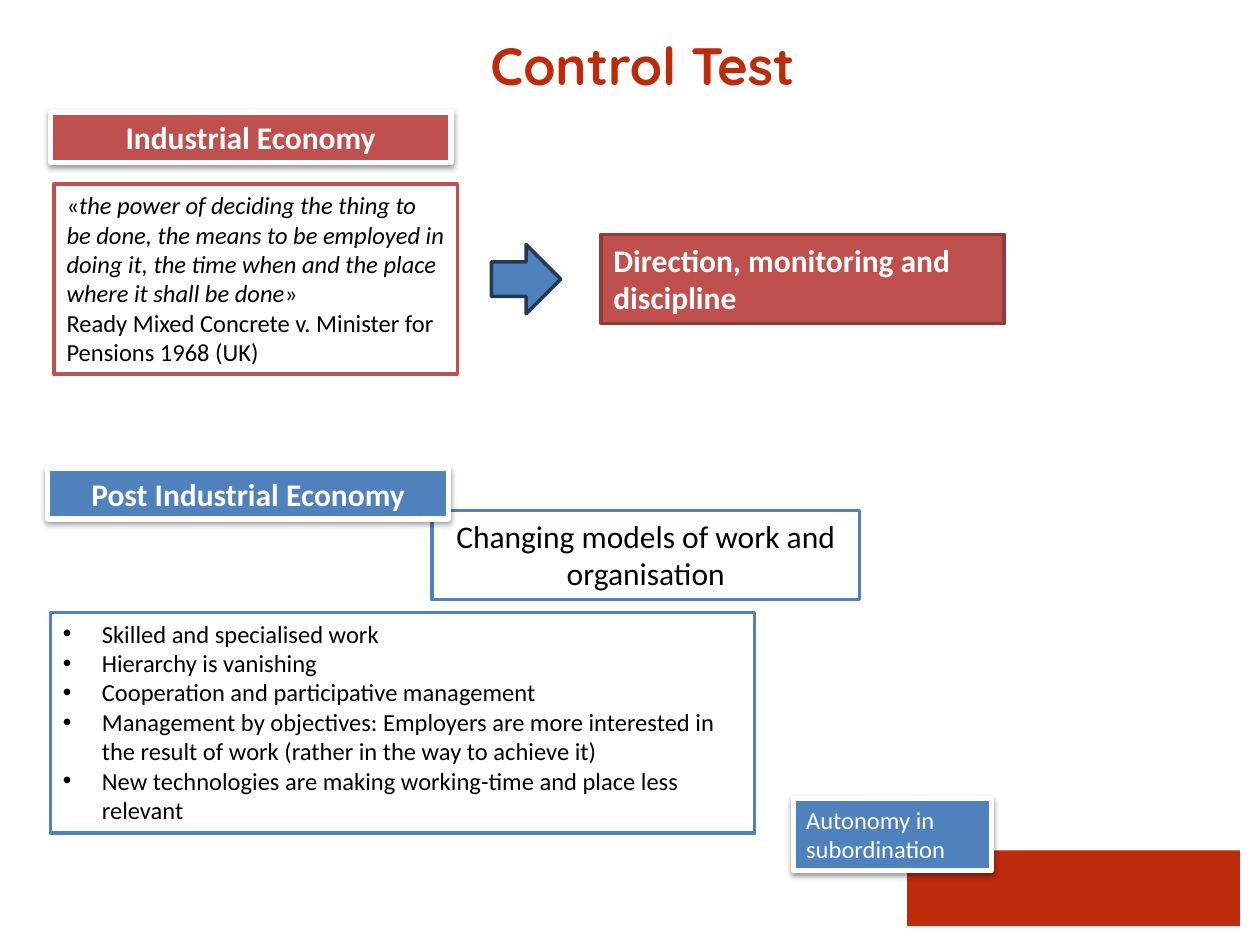
from lxml import etree
from pptx import Presentation
from pptx.dml.color import RGBColor
from pptx.enum.shapes import MSO_SHAPE
from pptx.enum.text import MSO_ANCHOR, PP_ALIGN
from pptx.oxml.ns import qn
from pptx.util import Inches, Pt

RECT, ARROW = MSO_SHAPE.RECTANGLE, MSO_SHAPE.RIGHT_ARROW
LEFT, CENTER = PP_ALIGN.LEFT, PP_ALIGN.CENTER
TOP = MSO_ANCHOR.TOP

BRAND = RGBColor(0xBD, 0x2B, 0x0B)
RED = RGBColor(0xC0, 0x50, 0x4D)
MAROON = RGBColor(0x8E, 0x3B, 0x39)
BLUE = RGBColor(0x4F, 0x81, 0xBD)
NAVY = RGBColor(0x23, 0x39, 0x53)
WHITE = RGBColor(0xFF, 0xFF, 0xFF)
BLACK = RGBColor(0, 0, 0)

prs = Presentation()
prs.slide_width, prs.slide_height = Inches(10), Inches(7.5)
slide = prs.slides.add_slide(prs.slide_layouts[6])


def add_box(pos, fill, line=None, width=2, kind=RECT):
    """Draw a filled shape; a white outline comes with a soft shadow."""
    box = slide.shapes.add_shape(kind, *[Inches(v) for v in pos])
    box.shadow.inherit = False
    box.fill.solid()
    box.fill.fore_color.rgb = fill
    if line is None:
        box.line.fill.background()
    else:
        box.line.color.rgb = line
        box.line.width = Pt(width)
    if line == WHITE:
        effects = box._element.spPr.find(qn("a:effectLst"))
        shade = etree.SubElement(effects, qn("a:outerShdw"), blurRad=str(Pt(3.1)),
                                 dist=str(Pt(1.6)), dir="5400000", rotWithShape="0")
        color = etree.SubElement(shade, qn("a:srgbClr"), val="000000")
        etree.SubElement(color, qn("a:alpha"), val="38000")
    return box


def write(box, text, size, color, bold=False, align=LEFT, face="Calibri", bullet=False):
    """Fill a box with one paragraph per line of text."""
    frame = box.text_frame
    frame.text = text
    frame.word_wrap = True
    frame.vertical_anchor = TOP
    for para in frame.paragraphs:
        if bullet:
            props = para._p.get_or_add_pPr()
            props.set("marL", str(Inches(0.31)))
            props.set("indent", str(Inches(-0.31)))
            etree.SubElement(props, qn("a:buFont"), typeface="Arial")
            etree.SubElement(props, qn("a:buChar"), char="•")
        para.alignment = align
        for run in para.runs:
            run.font.name = face
            run.font.size = Pt(size)
            run.font.bold = bold
            run.font.color.rgb = color


# Corner block and title
add_box((7.2, 6.75, 2.64, 0.6), BRAND)
title = slide.shapes.add_textbox(Inches(1.54), Inches(0.21), Inches(7.12), Inches(1.25))
write(title, "Control Test", 30, BRAND, True, CENTER, "Quicksand")

# Industrial economy: quoted ruling, heading and outcome
quote = add_box((0.43, 1.46, 3.2, 1.51), WHITE, RED)
first = quote.text_frame.paragraphs[0]
for part in (
    "«",
    "the power of deciding the thing to be done, the means to be employed in "
    "doing it, the time when and the place where it shall be done",
    "»",
):
    run = first.add_run()
    run.text = part
    run.font.italic = len(part) > 1
case = quote.text_frame.add_paragraph()
case.text = "Ready Mixed Concrete v. Minister for Pensions 1968 (UK)"
quote.text_frame.word_wrap = True
quote.text_frame.vertical_anchor = TOP
for para in quote.text_frame.paragraphs:
    para.alignment = LEFT
    for run in para.runs:
        run.font.name = "Calibri"
        run.font.size = Pt(14)
        run.font.color.rgb = BLACK

head = add_box((0.4, 0.89, 3.18, 0.4), RED, WHITE, 3)
write(head, "Industrial Economy", 18, WHITE, True, CENTER)
result = add_box((4.77, 1.86, 3.2, 0.71), RED, MAROON)
write(result, "Direction, monitoring and discipline", 18, WHITE, True)

# Post industrial economy: models, traits, outcome and heading
models = add_box((3.43, 4.05, 3.39, 0.71), WHITE, BLUE)
write(models, "Changing models of work and organisation", 18, BLACK, align=CENTER)

TRAITS = [
    "Skilled and specialised work",
    "Hierarchy is vanishing",
    "Cooperation and participative management",
    "Management by objectives: Employers are more interested in the result of work "
    "(rather in the way to achieve it)",
    "New technologies are making working-time and place less relevant",
]
traits = add_box((0.4, 4.86, 5.59, 1.75), WHITE, BLUE)
write(traits, "\n".join(TRAITS), 14, BLACK, bullet=True)

result = add_box((6.3, 6.34, 1.57, 0.57), BLUE, WHITE, 3)
write(result, "Autonomy in subordination", 14, WHITE)

# Arrow from the ruling to its outcome
add_box((3.9, 1.94, 0.55, 0.55), BLUE, NAVY, kind=ARROW)

head = add_box((0.38, 3.72, 3.18, 0.4), BLUE, WHITE, 3)
write(head, "Post Industrial Economy", 18, WHITE, True, CENTER)

prs.save("out.pptx")
